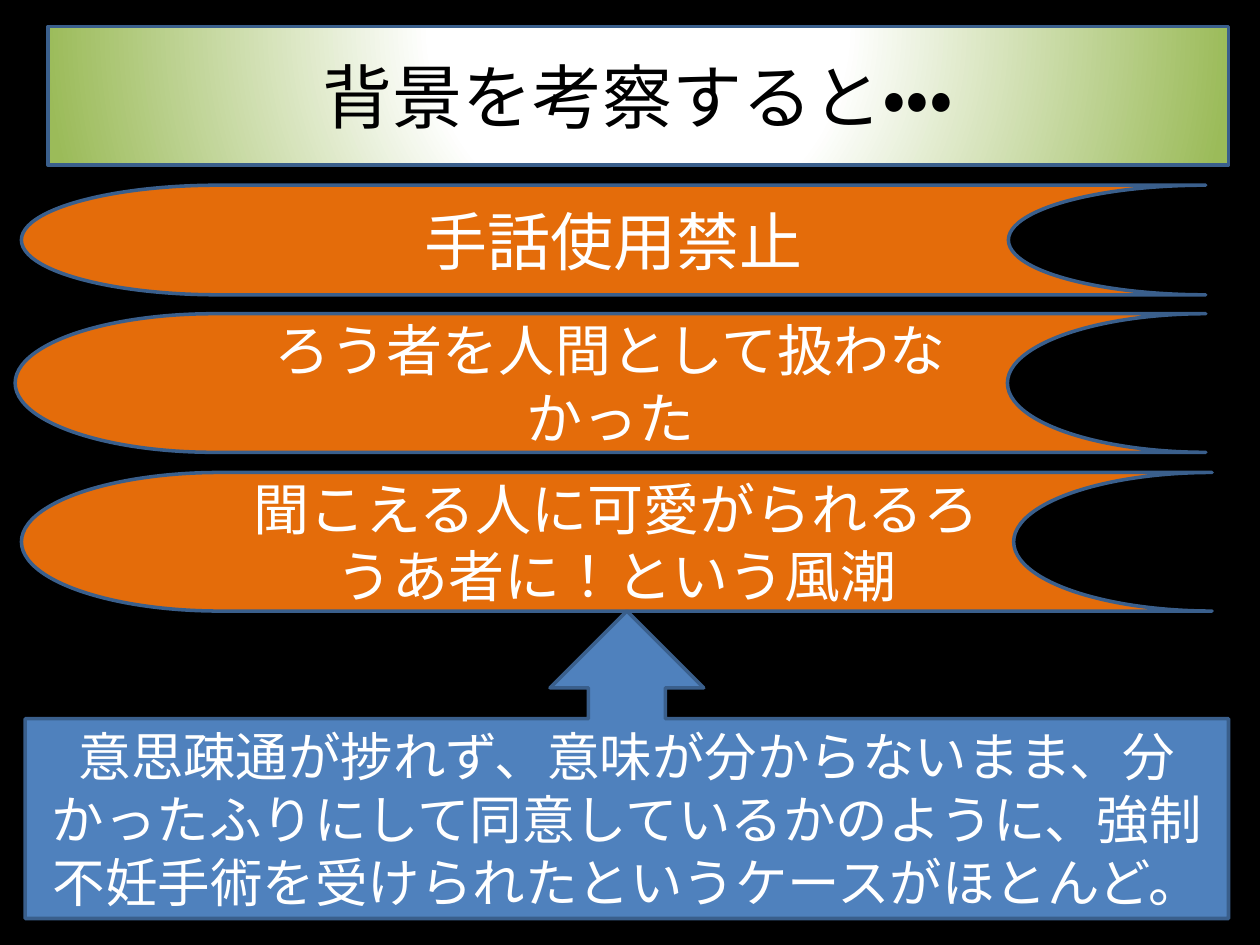
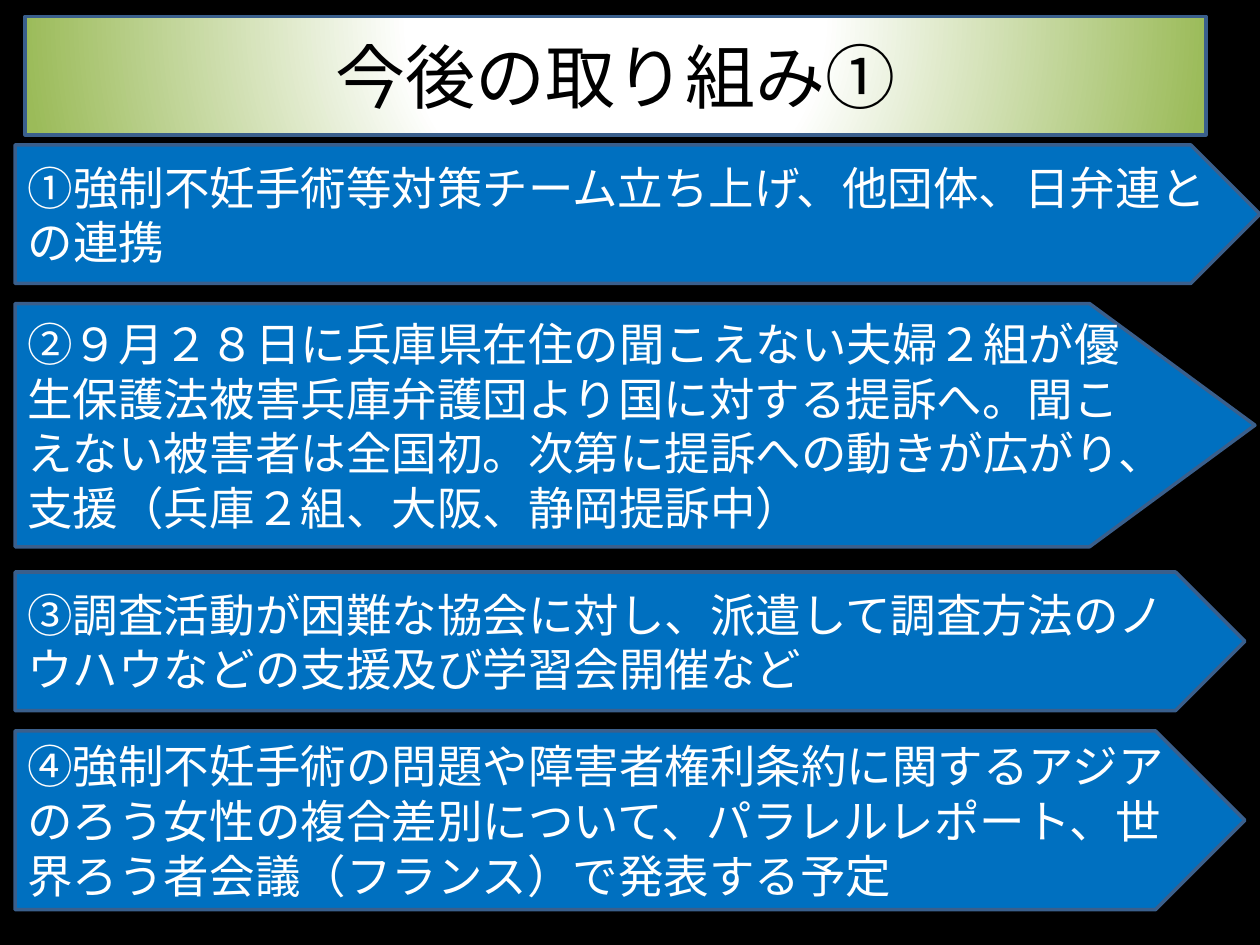
import dataclasses

import lxml.etree
import pptx
import pptx.dml.color
import pptx.enum.lang
import pptx.enum.shapes
import pptx.enum.text
import pptx.oxml
import pptx.oxml.ns
import pptx.util

RGB = pptx.dml.color.RGBColor
BLACK = RGB(0x00, 0x00, 0x00)
WHITE = RGB(0xFF, 0xFF, 0xFF)
GREEN = RGB(0x9B, 0xBB, 0x59)
ORANGE = RGB(0xE4, 0x6C, 0x0A)
BLUE = RGB(0x4F, 0x81, 0xBD)
DEEP_BLUE = RGB(0x00, 0x70, 0xC0)
OUTLINE = RGB(0x3A, 0x5F, 0x8C)

SHAPE = pptx.enum.shapes.MSO_SHAPE
ALIGN = pptx.enum.text.PP_ALIGN
FONT_NAME = "Calibri"
OUTLINE_WIDTH = pptx.util.Pt(2)
GRID_COLUMNS = 100
GRID_ROWS = 75
GRADIENT_STOPS = ((0, WHITE), (35, WHITE), (100, GREEN))
FRAME_FORMAT = {
    "word_wrap": True,
    "auto_size": pptx.enum.text.MSO_AUTO_SIZE.NONE,
    "vertical_anchor": pptx.enum.text.MSO_ANCHOR.MIDDLE,
}


@dataclasses.dataclass(frozen=True)
class Area:
    column: float
    row: float
    columns: float
    rows: float


@dataclasses.dataclass(frozen=True)
class Style:
    shape: SHAPE
    fill: RGB
    align: ALIGN


@dataclasses.dataclass(frozen=True)
class Panel:
    text: str
    area: Area
    style: Style
    size: int
    adjustment: float | None = None


@dataclasses.dataclass(frozen=True)
class Content:
    title: str
    title_area: Area
    panels: tuple[Panel, ...]


BANNER = Style(SHAPE.FLOWCHART_STORED_DATA, ORANGE, ALIGN.CENTER)
CALLOUT = Style(SHAPE.UP_ARROW_CALLOUT, BLUE, ALIGN.CENTER)
STEP = Style(SHAPE.PENTAGON, DEEP_BLUE, ALIGN.LEFT)
STEP_SIZE = 26

CONTENTS = (
    Content(
        "背景を考察すると・・・",
        Area(3.8, 2.1, 93.7, 11),
        (
            Panel("手話使用禁止", Area(1.7, 14.7, 94, 8.7), BANNER, 36),
            Panel("ろう者を人間として扱わなかった", Area(1.2, 24.9, 94.5, 11), BANNER, 32),
            Panel("聞こえる人に可愛がられるろうあ者に！という風潮",
                  Area(1.7, 37.5, 94.5, 11), BANNER, 32),
            Panel("意思疎通が捗れず、意味が分からないまま、分かったふりにして同意している"
                  "かのように、強制不妊手術を受けられたというケースがほとんど。",
                  Area(2, 48.5, 95.5, 24.4), CALLOUT, 30),
        ),
    ),
    Content(
        "今後の取り組み①",
        Area(2, 1.3, 93.7, 9.4),
        (
            Panel("①強制不妊手術等対策チーム立ち上げ、他団体、日弁連との連携",
                  Area(1.2, 11.5, 98.8, 11), STEP, STEP_SIZE),
            Panel("②９月２８日に兵庫県在住の聞こえない夫婦２組が優生保護法被害兵庫弁護団より"
                  "国に対する提訴へ。聞こえない被害者は全国初。次第に提訴への動きが広がり、"
                  "支援（兵庫２組、大阪、静岡提訴中）",
                  Area(1.2, 24.1, 98.4, 19.3), STEP, STEP_SIZE, 0.68),
            Panel("③調査活動が困難な協会に対し、派遣して調査方法のノウハウなどの支援及び"
                  "学習会開催など",
                  Area(1.2, 45.4, 97.6, 11), STEP, STEP_SIZE),
            Panel("④強制不妊手術の問題や障害者権利条約に関するアジアのろう女性の複合差別に"
                  "ついて、パラレルレポート、世界ろう者会議（フランス）で発表する予定",
                  Area(1.2, 58, 97.6, 14.2), STEP, STEP_SIZE),
        ),
    ),
)


def apply_format(target, values: dict) -> None:
    for name, value in values.items():
        setattr(target, name, value)


def place(deck, area: Area) -> dict:
    column = deck.slide_width / GRID_COLUMNS
    row = deck.slide_height / GRID_ROWS
    return {
        "left": round(area.column * column),
        "top": round(area.row * row),
        "width": round(area.columns * column),
        "height": round(area.rows * row),
    }


def write_text(box, text: str, size: int, color: RGB, align: ALIGN) -> None:
    frame = box.text_frame
    apply_format(frame, FRAME_FORMAT)
    para = frame.paragraphs[0]
    para.alignment = align
    span = para.add_run()
    span.text = text
    apply_format(span.font, {
        "name": FONT_NAME,
        "size": pptx.util.Pt(size),
        "language_id": pptx.enum.lang.MSO_LANGUAGE_ID.JAPANESE,
    })
    span.font.color.rgb = color


def draw_outline(box) -> None:
    box.line.color.rgb = OUTLINE
    box.line.width = OUTLINE_WIDTH


def draw_title(deck, page, text: str, area: Area) -> None:
    title = page.shapes.title
    apply_format(title, place(deck, area))
    namespace = pptx.oxml.ns.nsdecls("a")
    stops = "".join(
        f'<a:gs pos="{share * 1000}"><a:srgbClr val="{color}"/></a:gs>'
        for share, color in GRADIENT_STOPS
    )
    geometry = f'<a:prstGeom {namespace} prst="roundRect"><a:avLst/></a:prstGeom>'
    gradient = (
        f'<a:gradFill {namespace} rotWithShape="1"><a:gsLst>{stops}</a:gsLst>'
        '<a:path path="circle"><a:fillToRect l="50000" t="-80000" r="50000" b="180000"/>'
        '</a:path></a:gradFill>'
    )
    for markup in (geometry, gradient):
        title.element.spPr.append(pptx.oxml.parse_xml(markup))
    draw_outline(title)
    write_text(title, text, 40, BLACK, ALIGN.CENTER)


def draw_panel(deck, page, panel: Panel) -> None:
    style = panel.style
    box = page.shapes.add_shape(style.shape, **place(deck, panel.area))
    box.shadow.inherit = False
    box.fill.solid()
    box.fill.fore_color.rgb = style.fill
    draw_outline(box)
    if panel.adjustment is not None:
        box.adjustments[0] = panel.adjustment
    write_text(box, panel.text, panel.size, WHITE, style.align)


def draw_page(deck, content: Content) -> None:
    page = deck.slides.add_slide(deck.slide_layouts.get_by_name("Title Only"))
    page.background.fill.solid()
    page.background.fill.fore_color.rgb = BLACK
    draw_title(deck, page, content.title, content.title_area)
    for panel in content.panels:
        draw_panel(deck, page, panel)


def main() -> None:
    deck = pptx.Presentation()
    apply_format(deck, {
        "slide_width": pptx.util.Inches(10),
        "slide_height": pptx.util.Inches(7.5),
    })
    for content in CONTENTS:
        draw_page(deck, content)
    deck.save("out.pptx")


if __name__ == "__main__":
    main()
